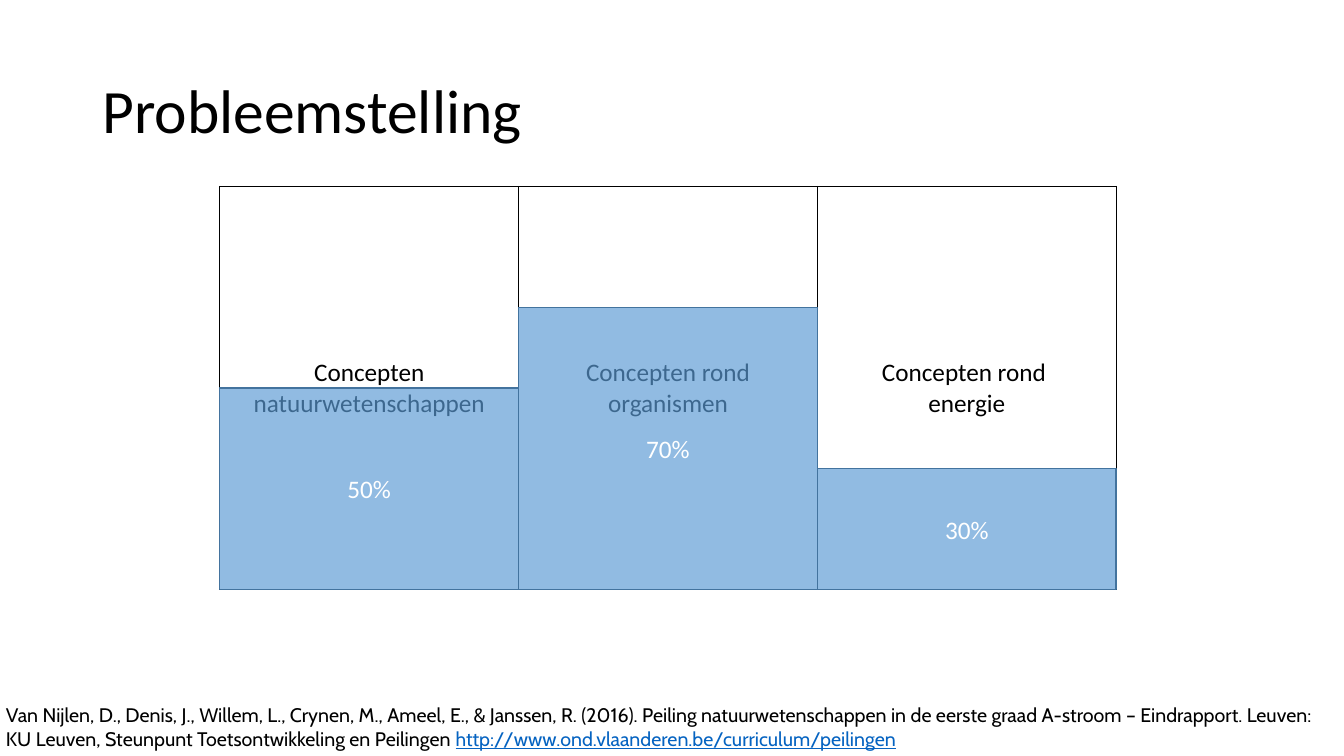
from lxml import etree
from pptx import Presentation
from pptx.dml.color import RGBColor
from pptx.enum.shapes import MSO_SHAPE
from pptx.enum.text import MSO_ANCHOR, PP_ALIGN
from pptx.oxml.ns import qn
from pptx.util import Cm, Pt

RECTANGLE = MSO_SHAPE.RECTANGLE
MIDDLE = MSO_ANCHOR.MIDDLE
TOP = MSO_ANCHOR.TOP
LEFT = PP_ALIGN.LEFT
CENTER = PP_ALIGN.CENTER

COLORS = {
    "text": "000000",
    "link": "0563C1",
    "bar": "5B9BD5",
    "bar_line": "43739E",
    "bar_text": "FFFFFF",
}
BAR_OPACITY = 67
GRID_LEFT, GRID_TOP = 5.54, 4.7
COLUMN_WIDTH, GRID_HEIGHT = 7.53, 10.16

CONCEPTS = [
    (["Concepten natuurwetenschappen"], 50),
    (["Concepten rond organismen"], 70),
    (["Concepten rond ", "energie"], 30),
]
CITATION = (
    "Van Nijlen, D., Denis, J., Willem, L., Crynen, M., Ameel, E., & Janssen, R. (2016). "
    "Peiling natuurwetenschappen in de eerste graad A-stroom – Eindrapport. "
    "Leuven: KU Leuven, Steunpunt Toetsontwikkeling en Peilingen "
)
REPORT_URL = "http://www.ond.vlaanderen.be/curriculum/peilingen"


def rgb(name):
    return RGBColor.from_string(COLORS[name])


def add_run(paragraph, text, size=18, font="Calibri", color="text", underline=False):
    run = paragraph.add_run()
    run.text = text
    run.font.size = Pt(size)
    run.font.name = font
    run.font.bold = False
    run.font.underline = underline
    run.font.color.rgb = rgb(color)


def add_text_area(slide, left, top, width, height, anchor):
    frame = slide.shapes.add_textbox(Cm(left), Cm(top), Cm(width), Cm(height)).text_frame
    frame.word_wrap = True
    frame.vertical_anchor = anchor
    paragraph = frame.paragraphs[0]
    paragraph.alignment = LEFT
    return paragraph


def add_title(slide, text):
    title = add_text_area(slide, 2.33, 1.01, 29.21, 3.68, MIDDLE)
    title.line_spacing = 0.9
    add_run(title, text, size=44)


def add_source(slide):
    source = add_text_area(slide, -0.1, 17.6, 34.08, 1.45, TOP)
    add_run(source, CITATION, size=14, font="Cabin")
    add_run(source, REPORT_URL, size=14, font="Cabin", color="link", underline=True)


def set_borders(cell):
    properties = cell._tc.get_or_add_tcPr()
    for position, side in enumerate(("a:lnL", "a:lnR", "a:lnT", "a:lnB")):
        border = etree.Element(qn(side), w=str(Pt(1)))
        fill = etree.SubElement(border, qn("a:solidFill"))
        etree.SubElement(fill, qn("a:srgbClr"), val=COLORS["text"])
        properties.insert(position, border)


def fill_cell(cell, lines):
    cell.fill.background()
    cell.vertical_anchor = MIDDLE
    set_borders(cell)
    frame = cell.text_frame
    for index, line in enumerate(lines):
        paragraph = frame.add_paragraph() if index else frame.paragraphs[0]
        paragraph.alignment = CENTER
        add_run(paragraph, line)


def add_concept_table(slide):
    count = len(CONCEPTS)
    table = slide.shapes.add_table(
        1, count, Cm(GRID_LEFT), Cm(GRID_TOP), Cm(count * COLUMN_WIDTH), Cm(GRID_HEIGHT)
    ).table
    table.first_row = False
    table.horz_banding = False
    for column, (lines, _) in enumerate(CONCEPTS):
        table.columns[column].width = Cm(COLUMN_WIDTH)
        fill_cell(table.cell(0, column), lines)


def add_score_bar(slide, column, percent):
    height = GRID_HEIGHT * percent / 100
    bar = slide.shapes.add_shape(
        RECTANGLE,
        Cm(GRID_LEFT + column * COLUMN_WIDTH),
        Cm(GRID_TOP + GRID_HEIGHT - height),
        Cm(COLUMN_WIDTH),
        Cm(height),
    )
    bar.shadow.inherit = False
    bar.fill.solid()
    bar.fill.fore_color.rgb = rgb("bar")
    fill_color = bar._element.spPr.find(qn("a:solidFill"))[0]
    etree.SubElement(fill_color, qn("a:alpha"), val=str(BAR_OPACITY * 1000))
    bar.line.color.rgb = rgb("bar_line")
    bar.line.width = Pt(1)
    bar.text_frame.vertical_anchor = MIDDLE
    score = bar.text_frame.paragraphs[0]
    score.alignment = CENTER
    add_run(score, f"{percent}%", color="bar_text")


def main():
    presentation = Presentation()
    presentation.slide_width = Cm(33.87)
    presentation.slide_height = Cm(19.05)
    slide = presentation.slides.add_slide(presentation.slide_layouts[6])
    add_title(slide, "Probleemstelling")
    add_source(slide)
    add_concept_table(slide)
    for column, (_, percent) in enumerate(CONCEPTS):
        add_score_bar(slide, column, percent)
    presentation.save("out.pptx")


if __name__ == "__main__":
    main()
